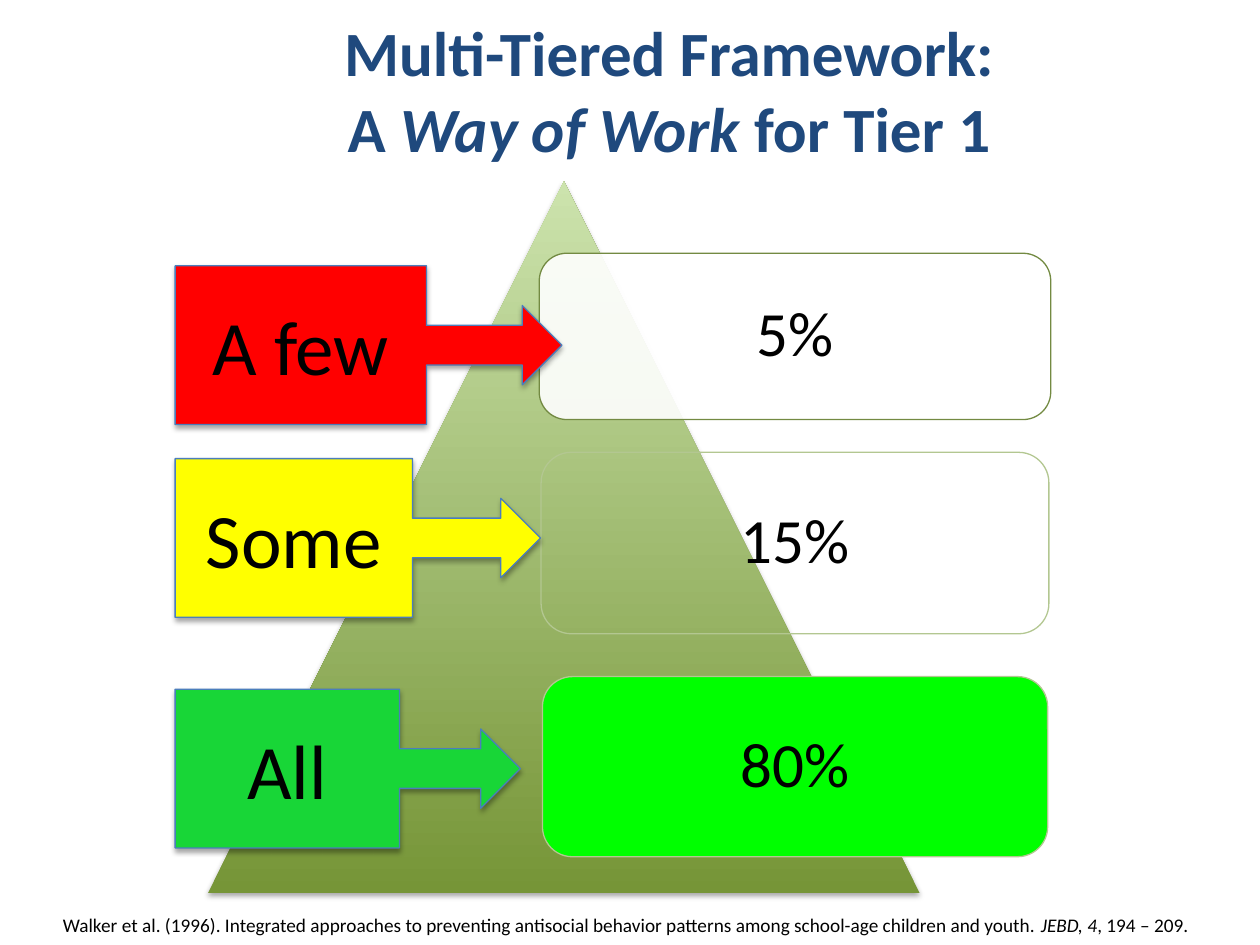
import pptx
import pptx.util
import pptx.dml.color
import pptx.enum.shapes
import pptx.enum.text
import pptx.oxml
import pptx.oxml.ns

Inches, Pt = pptx.util.Inches, pptx.util.Pt
RGB = pptx.dml.color.RGBColor
SHAPE = pptx.enum.shapes.MSO_SHAPE
ALIGN = pptx.enum.text.PP_ALIGN
ANCHOR = pptx.enum.text.MSO_ANCHOR

NAVY = RGB(0x1F, 0x49, 0x7D)
BLACK = RGB(0, 0, 0)
WHITE = RGB(255, 255, 255)
RED = RGB(255, 0, 0)
YELLOW = RGB(255, 255, 0)
GREEN = RGB(0x18, 0xD6, 0x37)
LIME = RGB(0, 255, 0)
BLUE = RGB(0x4B, 0x7E, 0xBC)
OLIVE = RGB(0x73, 0x8A, 0x42)
SAGE = RGB(0xB3, 0xC7, 0x91)
DARK = RGB(0x76, 0x95, 0x37)
PALE = RGB(0xCC, 0xE3, 0xAD)

TITLE = [
    [("Multi-Tiered Framework:", False)],
    [("A ", False), ("Way of Work", True), (" for Tier 1", False)],
]
SOURCE = [[
    ("Walker et al. (1996). Integrated approaches to preventing antisocial "
     "behavior patterns among school-age children and youth. ", False),
    ("JEBD, 4", True),
    (", 194 – 209.", False),
]]
SHARES = [
    ("5%", 2.01, 4.06, 1.32, WHITE, OLIVE),
    ("15%", 3.59, 4.03, 1.44, None, SAGE),
    ("80%", 5.37, 4.01, 1.43, LIME, SAGE),
]
GROUPS = [
    ("All", 5.47, 2.74, GREEN),
    ("Some", 3.64, 2.9, YELLOW),
    ("A few", 2.11, 3.07, RED),
]
MID = 6.31


def write(frame, lines, size, color=BLACK, bold=False, anchor=ANCHOR.MIDDLE,
          inset=None, spacing=None):
    frame.word_wrap = True
    frame.vertical_anchor = anchor
    if inset is not None:
        frame.margin_left = frame.margin_right = Inches(inset)
        frame.margin_top = frame.margin_bottom = Inches(inset)
    for i, line in enumerate(lines):
        para = frame.add_paragraph() if i else frame.paragraphs[0]
        para.alignment = ALIGN.CENTER
        para.line_spacing = spacing
        for text, slant in line:
            run = para.add_run()
            run.text = text
            font = run.font
            font.name, font.size = "Calibri", Pt(size)
            font.bold, font.italic = bold, slant
            font.color.rgb = color


def draw(slide, kind, box, fill=None, line=None):
    shape = slide.shapes.add_shape(kind, *map(Inches, box))
    shape.shadow.inherit = False
    if fill is None:
        shape.fill.background()
    else:
        shape.fill.solid()
        shape.fill.fore_color.rgb = fill
    if line is None:
        shape.line.fill.background()
    else:
        shape.line.color.rgb = line
        shape.line.width = Pt(0.75)
    return shape


def shade(shape):
    node = pptx.oxml.parse_xml(
        f'<a:outerShdw {pptx.oxml.ns.nsdecls("a")} blurRad="{Pt(3.1)}" '
        f'dist="{Pt(1.8)}" dir="5400000" rotWithShape="0">'
        '<a:srgbClr val="000000"><a:alpha val="35000"/></a:srgbClr>'
        '</a:outerShdw>')
    shape._element.spPr.find(pptx.oxml.ns.qn("a:effectLst")).append(node)


def fade(shape, share):
    color = shape.fill._xPr.find(
        pptx.oxml.ns.qn("a:solidFill")).find(pptx.oxml.ns.qn("a:srgbClr"))
    color.append(pptx.oxml.parse_xml(
        f'<a:alpha {pptx.oxml.ns.nsdecls("a")} val="{share * 1000}"/>'))


def main():
    deck = pptx.Presentation()
    deck.slide_width, deck.slide_height = Inches(10), Inches(7.5)
    slide = deck.slides.add_slide(deck.slide_layouts[5])

    peak = draw(slide, SHAPE.ISOSCELES_TRIANGLE, (1.65, 1.44, 5.65, 5.65))
    peak.fill.gradient()
    peak.fill.gradient_angle = 90
    for stop, color in zip(peak.fill.gradient_stops, (DARK, PALE)):
        stop.color.rgb = color
    shade(peak)

    for text, top, width, height, fill, line in SHARES:
        card = draw(slide, SHAPE.ROUNDED_RECTANGLE,
                    (MID - width / 2, top, width, height), fill, line)
        if fill == WHITE:
            fade(card, 90)
        write(card.text_frame, [[(text, False)]], 36, inset=0.15, spacing=0.9)

    title = slide.shapes.title
    title.left, title.top = Inches(0.81), Inches(0.06)
    title.width, title.height = Inches(9), Inches(1.31)
    write(title.text_frame, TITLE, 36, NAVY, bold=True, anchor=ANCHOR.TOP)

    note = slide.shapes.add_textbox(
        Inches(0.17), Inches(7.2), Inches(9.59), Inches(0.29))
    write(note.text_frame, SOURCE, 11, anchor=ANCHOR.TOP)

    for text, top, width, fill in GROUPS:
        call = draw(slide, SHAPE.RIGHT_ARROW_CALLOUT,
                    (1.39, top, width, 1.26), fill, BLUE)
        shade(call)
        write(call.text_frame, [[(text, False)]], 44)

    deck.save("out.pptx")


if __name__ == "__main__":
    main()
